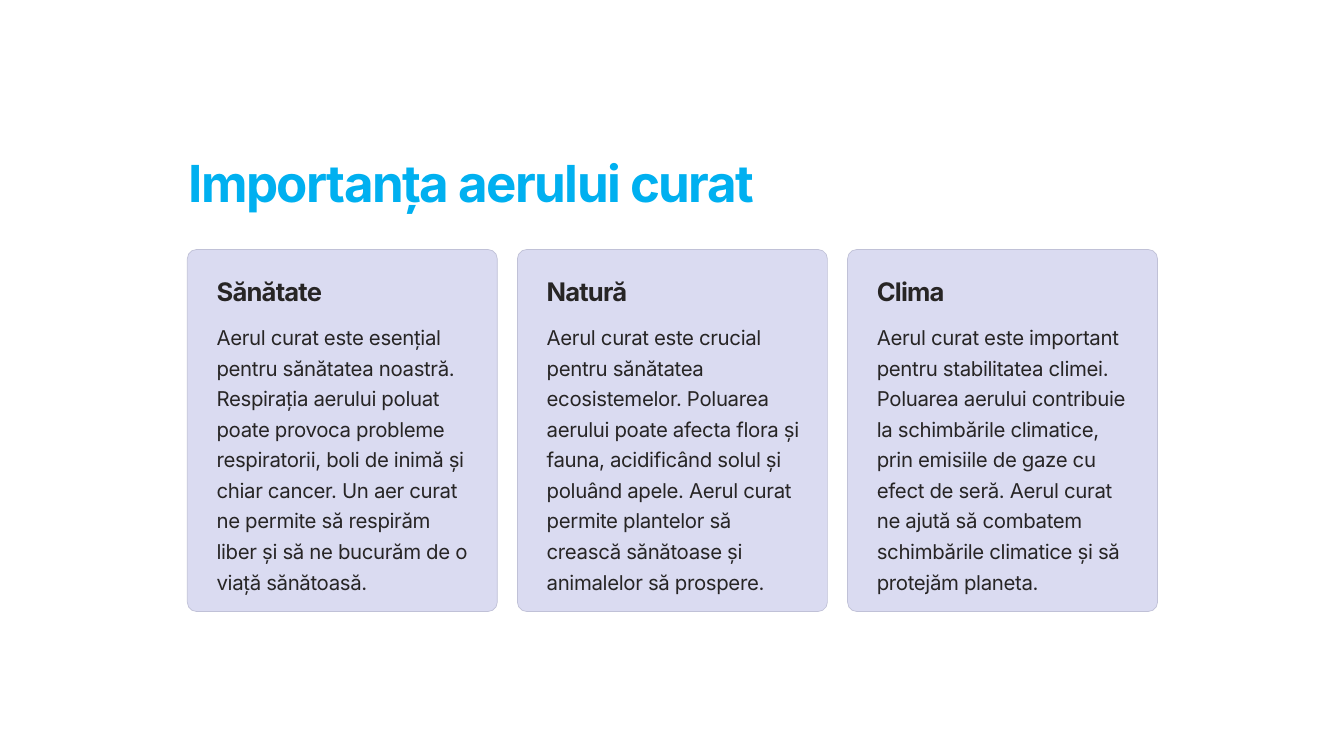
from pptx import Presentation
from pptx.dml.color import RGBColor
from pptx.enum.shapes import MSO_SHAPE
from pptx.enum.text import MSO_ANCHOR, MSO_AUTO_SIZE, PP_ALIGN
from pptx.util import Inches, Pt

COLORS = {"title": "00B0F0", "text": "272525", "card": "DADBF1", "border": "C0C1D7"}
CARDS = [
    ("Sănătate", "Aerul curat este esențial pentru sănătatea noastră. Respirația aerului poluat poate provoca probleme respiratorii, boli de inimă și chiar cancer. Un aer curat ne permite să respirăm liber și să ne bucurăm de o viață sănătoasă."),
    ("Natură", "Aerul curat este crucial pentru sănătatea ecosistemelor. Poluarea aerului poate afecta flora și fauna, acidificând solul și poluând apele. Aerul curat permite plantelor să crească sănătoase și animalelor să prospere."),
    ("Clima", "Aerul curat este important pentru stabilitatea climei. Poluarea aerului contribuie la schimbările climatice, prin emisiile de gaze cu efect de seră. Aerul curat ne ajută să combatem schimbările climatice și să protejăm planeta."),
]
LEFT, STEP, PAD = 2.23, 3.93, 0.25


def write(sp, text, size, leading, spacing, color="text", bold=False, wrap=False, align=PP_ALIGN.LEFT):
    tf = sp.text_frame
    tf.auto_size = MSO_AUTO_SIZE.NONE
    tf.word_wrap = wrap
    tf.vertical_anchor = MSO_ANCHOR.TOP
    p = tf.paragraphs[0]
    p.alignment = align
    p.line_spacing = Pt(leading)
    p.font.name = "Inter"
    p.font.size = Pt(size)
    p.font.bold = bold
    p.font.color.rgb = RGBColor.from_string(COLORS[color])
    r = p.add_run()
    r.text = text
    r._r.get_or_add_rPr().set("spc", str(spacing))


prs = Presentation()
prs.slide_width, prs.slide_height = Inches(16), Inches(9)
s = prs.slides.add_slide(prs.slide_layouts[5])

title = s.shapes.title
title.left, title.top = Inches(LEFT), Inches(1.72)
title.width, title.height = Inches(6.76), Inches(0.76)
write(title, "Importanța aerului curat", 43.7, 54.7, -130, "title", bold=True, align=PP_ALIGN.CENTER)
title.text_frame.margin_left = title.text_frame.margin_right = 0

for i, (heading, body) in enumerate(CARDS):
    x = LEFT + i * STEP
    card = s.shapes.add_shape(MSO_SHAPE.ROUNDED_RECTANGLE, Inches(x), Inches(2.97), Inches(3.69), Inches(4.31))
    card.adjustments[0] = 0.03
    card.shadow.inherit = False
    card.fill.solid()
    card.fill.fore_color.rgb = RGBColor.from_string(COLORS["card"])
    card.line.color.rgb = RGBColor.from_string(COLORS["border"])
    card.line.width = Pt(0.6)
    heading_box = s.shapes.add_textbox(Inches(x + PAD), Inches(3.22), Inches(3.04), Inches(0.38))
    write(heading_box, heading, 21.9, 27.3, -70, bold=True)
    body_box = s.shapes.add_textbox(Inches(x + PAD), Inches(3.75), Inches(3.21), Inches(3.28))
    write(body_box, body, 17.5, 26.2, -30, wrap=True)

prs.save("out.pptx")
